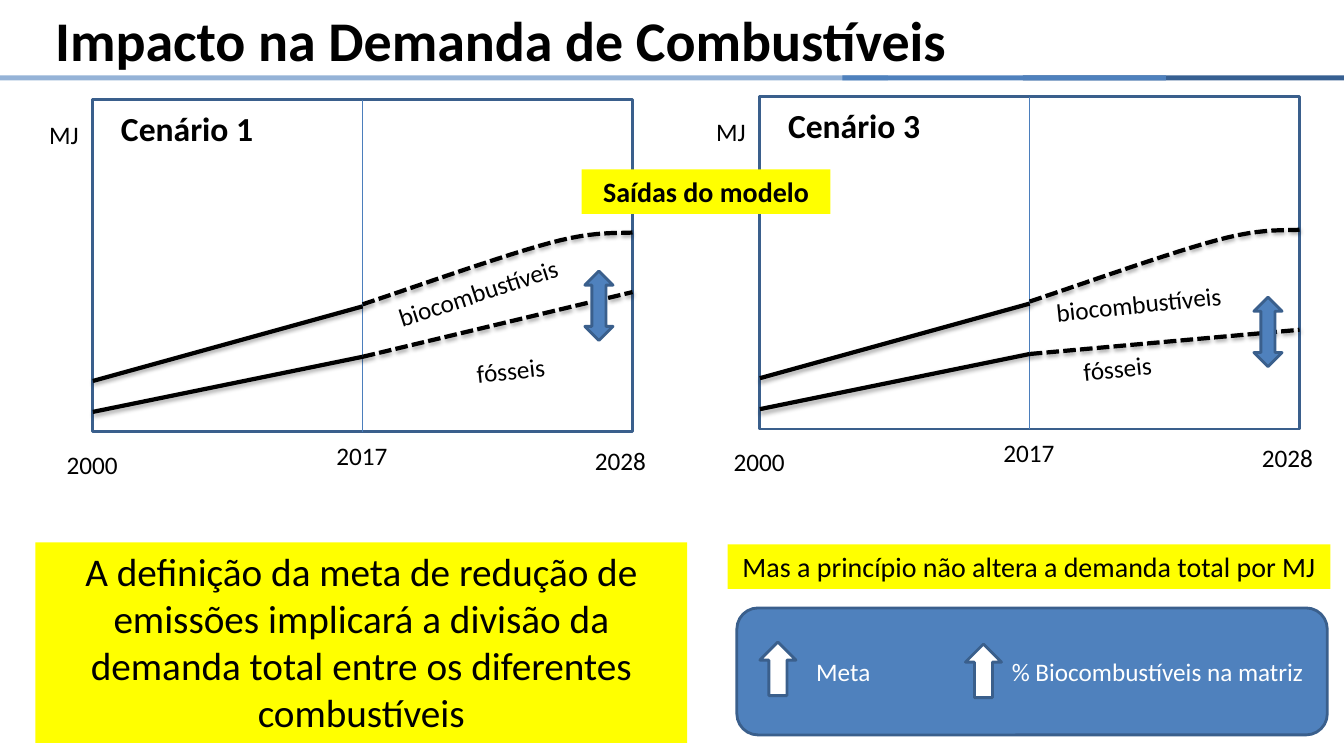
import pptx
import pptx.util
import pptx.dml.color
import pptx.enum.dml
import pptx.enum.shapes
import pptx.enum.text
import pptx.oxml
import pptx.oxml.ns

Cm = pptx.util.Cm
Pt = pptx.util.Pt
Kind = pptx.enum.shapes.MSO_SHAPE
Align = pptx.enum.text.PP_ALIGN
BLUE, EDGE, YELLOW, BLACK, WHITE = "4F81BD", "3A5F8C", "FFFF00", "000000", "FFFFFF"
CURVE = [(6.8, 5.16), (8.61, 4.55), (10.41, 3.91), (11.53, 3.61),
         (12.67, 3.3), (13.26, 3.38), (13.6, 3.35)]
SHADE = ('<a:outerShdw blurRad="40000" dist="23000" dir="5400000" rotWithShape="0">'
         '<a:srgbClr val="000000"><a:alpha val="35000"/></a:srgbClr></a:outerShdw>')


def paint(part, color):
    if hasattr(part, "solid"):
        part.solid()
        part = part.fore_color
    part.rgb = pptx.dml.color.RGBColor.from_string(color)


def add_xml(parent, tag, inner=""):
    space = pptx.oxml.ns.nsdecls("a")
    parent.append(pptx.oxml.parse_xml(f"<a:{tag} {space}>{inner}</a:{tag}>"))


def add_box(slide, kind, left, top, width, height, fill, edge=None):
    box = slide.shapes.add_shape(kind, Cm(left), Cm(top), Cm(width), Cm(height))
    box.shadow.inherit = False
    paint(box.fill, fill)
    if edge:
        paint(box.line.fill, edge)
        box.line.width = Pt(2)
    else:
        box.line.fill.background()
    return box


def add_text(slide, words, left, top, width, height, size=18, bold=False,
             color=BLACK, turn=0, wrap=False, fill=None):
    box = slide.shapes.add_textbox(Cm(left), Cm(top), Cm(width), Cm(height))
    box.rotation = turn
    frame = box.text_frame
    frame.word_wrap = wrap
    frame.auto_size = pptx.enum.text.MSO_AUTO_SIZE.SHAPE_TO_FIT_TEXT
    line = frame.paragraphs[0]
    line.text = words
    line.font.name = "Calibri"
    line.font.size = Pt(size)
    line.font.bold = bold
    paint(line.font.fill, color)
    if fill:
        paint(box.fill, fill)
        line.alignment = Align.CENTER
    return box


def style_line(line, color, width, dashed=False, shade=""):
    paint(line.line.fill, color)
    line.line.width = Pt(width)
    if dashed:
        line.line.dash_style = pptx.enum.dml.MSO_LINE.SQUARE_DOT
    add_xml(line._element.spPr, "effectLst", shade)


def add_line(slide, x1, y1, x2, y2):
    return slide.shapes.add_connector(
        pptx.enum.shapes.MSO_CONNECTOR.STRAIGHT, Cm(x1), Cm(y1), Cm(x2), Cm(y2))


def bend(ends, step):
    rest = 1 - step
    parts = (rest ** 3, 3 * rest ** 2 * step, 3 * rest * step ** 2, step ** 3)
    return tuple(sum(part * end[axis] for part, end in zip(parts, ends)) for axis in (0, 1))


def add_curve(slide, left, top):
    spots = [CURVE[0]] + [bend(CURVE[first:first + 4], step / 12)
                          for first in (0, 3) for step in range(1, 13)]
    spots = [(Cm(left + x), Cm(top + y)) for x, y in spots]
    form = slide.shapes.build_freeform(*spots[0])
    form.add_line_segments(spots[1:], close=False)
    curve = form.convert_to_shape()
    curve.fill.background()
    style_line(curve, BLACK, 3, True, SHADE)


def add_panel(slide, left, top, title, low, bio, fossil, arrow):
    frame = add_box(slide, Kind.RECTANGLE, left, top, 13.6, 8.37, WHITE, EDGE)
    split = add_line(slide, left + 6.8, top, left + 6.8, top + 8.37)
    split.begin_connect(frame, 0)
    split.end_connect(frame, 2)
    style_line(split, "4B7EBC", 0.75)
    for year, x, y in (("2000", -0.91, 8.69), ("2017", 5.89, 8.46), ("2028", 12.4, 8.59)):
        add_text(slide, year, left + x, top + y, 1.8, 1.02)
    for x1, y1, x2, y2 in ((0, 7.09, 6.8, 5.21), (0, 7.87, 6.8, 6.48), (6.8, 6.48, 13.6, low)):
        trend = add_line(slide, left + x1, top + y1, left + x2, top + y2)
        style_line(trend, BLACK, 3, x1 > 0, SHADE)
    add_curve(slide, left, top)
    add_text(slide, "MJ", left - 1.35, top + 0.36, 1.27, 1.02)
    add_text(slide, title, left + 0.46, top + 0.08, 3.89, 1.27, 24, True)
    for words, width, (x, y, turn) in (("biocombustíveis", 4.72, bio), ("fósseis", 2.26, fossil)):
        add_text(slide, words, left + x, top + y, width, 1.02, turn=turn)
    x, y = arrow
    add_box(slide, Kind.UP_DOWN_ARROW, left + x, top + y, 0.71, 1.75, BLUE, EDGE)


def add_goal(slide):
    add_box(slide, Kind.ROUNDED_RECTANGLE, 18.57, 15.32, 14.88, 3.2, BLUE, EDGE)
    goal = add_text(slide, "Meta\t% Biocombustíveis na matriz", 20.32, 16.41, 13.13, 1.02,
                    color=WHITE, wrap=True)
    props = goal.text_frame.paragraphs[0]._p.get_or_add_pPr()
    tabs = pptx.oxml.parse_xml(
        f'<a:tabLst {pptx.oxml.ns.nsdecls("a")}><a:tab pos="{Cm(4.93)}" algn="l"/></a:tabLst>')
    props.insert(0, tabs)
    for left, top in ((19.15, 16.18), (24.33, 16.23)):
        add_box(slide, Kind.UP_ARROW, left, top, 0.91, 1.35, WHITE, EDGE)


def main():
    deck = pptx.Presentation()
    deck.slide_width, deck.slide_height = Cm(33.87), Cm(19.05)
    slide = deck.slides.add_slide(deck.slide_layouts[6])
    for left, width, color in ((0, 22.38, "95B3D7"), (25.78, 8.09, "376092"), (21.23, 8.15, BLUE)):
        add_box(slide, Kind.RECTANGLE, left, 1.9, width, 0.13, color)
    title = add_text(slide, "Impacto na Demanda de Combustíveis", 1.14, 0.28, 26.42, 1.4,
                     40, True, wrap=True)
    title.text_frame.auto_size = pptx.enum.text.MSO_AUTO_SIZE.NONE
    title.text_frame.vertical_anchor = pptx.enum.text.MSO_ANCHOR.MIDDLE
    add_panel(slide, 2.34, 2.51, "Cenário 1", 4.85,
              (7.37, 4.34, -18), (9.42, 6.3, -5.7), (12.4, 4.32))
    add_panel(slide, 19.15, 2.44, "Cenário 3", 5.87,
              (7.21, 4.7, -5.9), (7.9, 6.32, -5.7), (12.45, 5.05))
    add_text(slide, "A definição da meta de redução de emissões implicará a divisão da "
             "demanda total entre os diferentes combustíveis", 0.89, 13.67, 16.43, 5.05,
             28, wrap=True, fill=YELLOW)
    add_text(slide, "Mas a princípio não altera a demanda total por MJ", 18.34, 13.72, 15.19, 1.12,
             20, wrap=True, fill=YELLOW)
    add_goal(slide)
    add_text(slide, "Saídas do modelo", 14.66, 4.27, 6.27, 1.12, 20, True, wrap=True, fill=YELLOW)
    deck.save("out.pptx")


if __name__ == "__main__":
    main()
